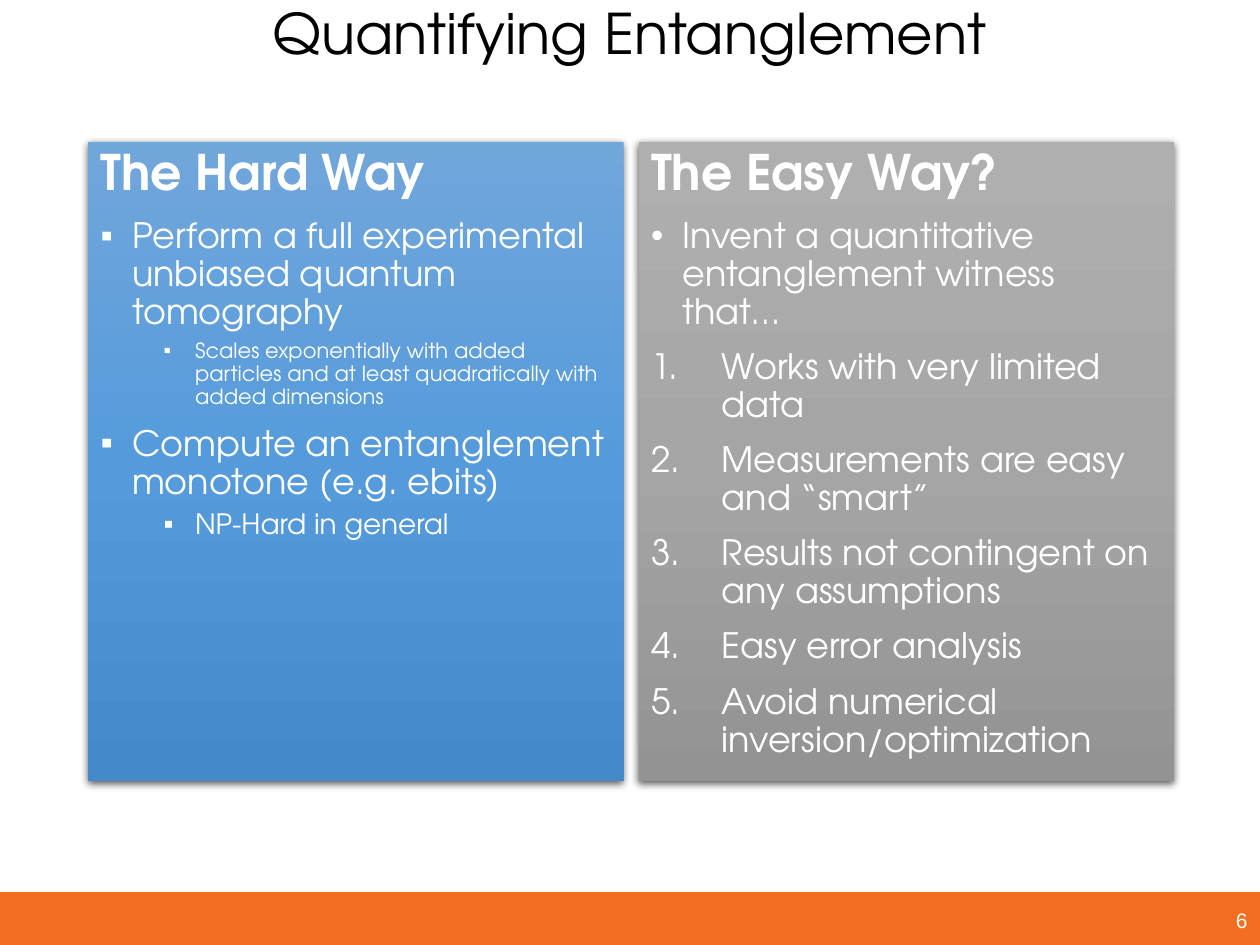
from copy import deepcopy

from lxml import etree
from pptx import Presentation
from pptx.dml.color import RGBColor
from pptx.enum.shapes import MSO_SHAPE
from pptx.enum.text import MSO_ANCHOR, PP_ALIGN
from pptx.oxml.ns import qn
from pptx.util import Inches, Pt

RECTANGLE = MSO_SHAPE.RECTANGLE
TOP, MIDDLE = MSO_ANCHOR.TOP, MSO_ANCHOR.MIDDLE
LEFT, CENTER, RIGHT = PP_ALIGN.LEFT, PP_ALIGN.CENTER, PP_ALIGN.RIGHT

WIDTH, HEIGHT = Inches(10), Inches(7.5)
HEADING, SQUARE, DOT, NUMBER = "", "▪", "•", "1."
PANEL_LEFT, PANEL_TOP = 0.07, 0.15
PANEL_WIDTH, PANEL_HEIGHT, PANEL_STEP = 0.425, 0.677, 0.437
FOOTER_TOP = 0.944

PANELS = [
    (("71A6DB", "559BDB", "448ACA"), [
        ("The Hard Way", HEADING, 0, 28),
        ("Perform a full experimental unbiased quantum tomography", SQUARE, 0, 20),
        ("Scales exponentially with added particles and at least "
         "quadratically with added dimensions", SQUARE, 1, 12),
        ("Compute an entanglement monotone (e.g. ebits)", SQUARE, 0, 20),
        ("NP-Hard in general", SQUARE, 1, 16),
    ]),
    (("AFAFAF", "A5A5A5", "939393"), [
        ("The Easy Way?", HEADING, 0, 28),
        ("Invent a quantitative entanglement witness that…", DOT, 0, 20),
        ("Works with very limited data", NUMBER, 0, 20),
        ("Measurements are easy and “smart”", NUMBER, 0, 20),
        ("Results not contingent on any assumptions", NUMBER, 0, 20),
        ("Easy error analysis", NUMBER, 0, 20),
        ("Avoid numerical inversion/optimization", NUMBER, 0, 20),
    ]),
]


def color(value):
    return RGBColor.from_string(value)


class SlideBuilder:
    font = "TeX Gyre Adventor"
    number_font = "Arial"
    light, dark, accent = "FFFFFF", "000000", "F36E20"

    def __init__(self, slide):
        self.slide = slide

    def place(self, left, top, width, height):
        return (round(left * WIDTH), round(top * HEIGHT),
                round(width * WIDTH), round(height * HEIGHT))

    def rectangle(self, *shares):
        block = self.slide.shapes.add_shape(RECTANGLE, *self.place(*shares))
        block.shadow.inherit = False
        block.line.fill.background()
        return block

    def band(self, *shares):
        block = self.rectangle(*shares)
        block.fill.solid()
        block.fill.fore_color.rgb = color(self.accent)

    def style(self, paragraph, size, hue, font, bold=False):
        for run in paragraph.runs:
            run.font.size = Pt(size)
            run.font.name = font
            run.font.bold = bold
            run.font.color.rgb = color(hue)

    def label(self, text, shares, size, hue, font, align, anchor, spacing=1.0):
        frame = self.slide.shapes.add_textbox(*self.place(*shares)).text_frame
        frame.word_wrap = True
        frame.vertical_anchor = anchor
        frame.text = text
        paragraph = frame.paragraphs[0]
        paragraph.alignment = align
        paragraph.line_spacing = spacing
        self.style(paragraph, size, hue, font)

    def gradient(self, block, hues):
        block.fill.gradient()
        block.fill.gradient_angle = 270
        stops = block._element.spPr.find(".//" + qn("a:gsLst"))
        stops.insert(1, deepcopy(stops[0]))
        for index, (stop, hue) in enumerate(zip(block.fill.gradient_stops, hues)):
            stop.position = index / 2
            stop.color.rgb = color(hue)

    def drop_shadow(self, block):
        effects = block._element.spPr.find(qn("a:effectLst"))
        shadow = etree.SubElement(
            effects, qn("a:outerShdw"), blurRad=str(Pt(4.5)), dist=str(Pt(1.5)),
            dir="5400000", algn="ctr", rotWithShape="0")
        black = etree.SubElement(shadow, qn("a:srgbClr"), val=self.dark)
        etree.SubElement(black, qn("a:alpha"), val="63000")

    def bullet(self, paragraph, mark, level):
        hanging = 0.56 if mark == NUMBER else 0.25
        properties = paragraph._p.get_or_add_pPr()
        properties.set("marL", str(Inches(hanging + 0.5 * level)))
        properties.set("indent", str(-Inches(hanging)))
        if mark == NUMBER:
            etree.SubElement(properties, qn("a:buFont"), typeface=self.font)
            etree.SubElement(properties, qn("a:buAutoNum"), type="arabicPeriod")
        else:
            etree.SubElement(properties, qn("a:buFont"), typeface=self.number_font)
            etree.SubElement(properties, qn("a:buChar"), char=mark)

    def panel(self, shares, hues, lines):
        block = self.rectangle(*shares)
        self.gradient(block, hues)
        self.drop_shadow(block)
        frame = block.text_frame
        frame.word_wrap = True
        frame.vertical_anchor = TOP
        for index, (text, mark, level, size) in enumerate(lines):
            paragraph = frame.add_paragraph() if index else frame.paragraphs[0]
            paragraph.text = text
            if mark:
                self.bullet(paragraph, mark, level)
            paragraph.level = level
            paragraph.alignment = LEFT
            paragraph.line_spacing = 0.9
            if index:
                paragraph.space_before = Pt(5 if level else 10)
            self.style(paragraph, size, self.light, self.font, mark == HEADING)


def main():
    deck = Presentation()
    deck.slide_width, deck.slide_height = WIDTH, HEIGHT
    builder = SlideBuilder(deck.slides.add_slide(deck.slide_layouts[6]))
    builder.band(0, FOOTER_TOP, 1, 1 - FOOTER_TOP)
    builder.label("Quantifying Entanglement", (0, 0, 1, 0.09), 32, builder.dark,
                  builder.font, CENTER, TOP, 0.9)
    for column, (hues, lines) in enumerate(PANELS):
        left = PANEL_LEFT + column * PANEL_STEP
        builder.panel((left, PANEL_TOP, PANEL_WIDTH, PANEL_HEIGHT), hues, lines)
    builder.label("6", (0.775, 0.947, 0.225, 0.053), 12, builder.light,
                  builder.number_font, RIGHT, MIDDLE)
    deck.save("out.pptx")


if __name__ == "__main__":
    main()
